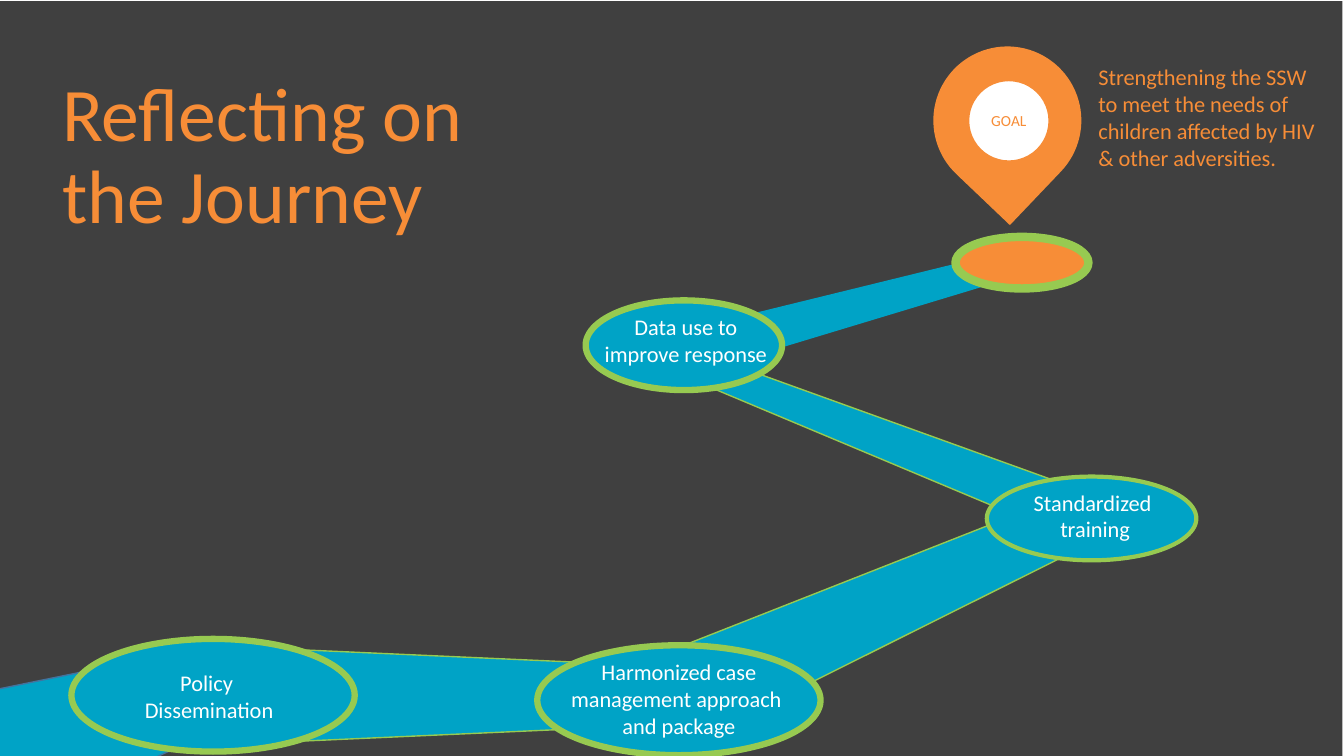
"""Build the "Reflecting on the Journey" road map slide."""
from dataclasses import dataclass

from pptx import Presentation
from pptx.dml.color import RGBColor
from pptx.enum.shapes import MSO_SHAPE
from pptx.enum.text import MSO_ANCHOR, PP_ALIGN
from pptx.util import Cm, Pt

RECT = MSO_SHAPE.RECTANGLE
ROAD = MSO_SHAPE.FLOWCHART_MANUAL_OPERATION
OVAL = MSO_SHAPE.OVAL
TEAR = MSO_SHAPE.TEAR
LEFT, CENTER = PP_ALIGN.LEFT, PP_ALIGN.CENTER
TOP, MIDDLE = MSO_ANCHOR.TOP, MSO_ANCHOR.MIDDLE

FONT = "Calibri"
GRAY, WHITE = "404040", "FFFFFF"
BLUE, GREEN, ORANGE, NAVY = "00A3C6", "97CA51", "F78D37", "43739E"


@dataclass
class Form:
    kind: int
    box: tuple[float, float, float, float]
    fill: str = BLUE
    line: str = ""
    width: float = 1
    turn: float = 0


@dataclass
class Label:
    box: tuple[float, float, float, float]
    lines: tuple[str, ...]
    size: int = 16
    color: str = WHITE
    align: int = CENTER
    anchor: int = TOP
    space: float = 1


FORMS = [
    Form(RECT, (0, 0.03, 33.83, 19.05), GRAY),
    Form(ROAD, (0.51, 15.32, 3.51, 5.99), line=NAVY, turn=251.8),
    Form(ROAD, (21.44, 6.32, 1.19, 9.32), line=GREEN, turn=111.3),
    Form(ROAD, (20.96, 10.06, 2.31, 10.54), line=GREEN, turn=246),
    Form(ROAD, (19.96, 3.53, 1.19, 8.94), turn=254.7),
    Form(ROAD, (10.08, 12.04, 2.46, 10.97), line=GREEN, turn=270),
    Form(OVAL, (24.87, 12.01, 5.28, 2.11), line=GREEN, width=3),
    Form(OVAL, (24.08, 5.97, 3.35, 1.3), ORANGE, GREEN, 6),
    Form(OVAL, (14.76, 7.57, 4.95, 2.26), line=GREEN, width=4.5),
    Form(OVAL, (13.54, 16.26, 7.14, 2.77), line=GREEN, width=4.5),
    Form(OVAL, (1.8, 16.1, 7.14, 2.84), line=GREEN, width=4.5),
    Form(TEAR, (23.52, 1.17, 3.73, 3.73), ORANGE, turn=133.6),
]
GOAL = Form(OVAL, (24.41, 2.03, 2.03, 2.03), WHITE, ORANGE)
MARK = Label(GOAL.box, ("GOAL",), 11, ORANGE, anchor=MIDDLE)

LABELS = [
    Label((13.39, 16.46, 7.44, 2.31),
          ("Harmonized case management approach ", "and package")),
    Label((23.88, 12.19, 7.44, 1.63), ("Standardized ", "training")),
    Label((14.81, 7.77, 4.95, 1.63), ("Data use to improve response",)),
    Label((1.98, 16.74, 6.58, 1.63), ("Policy ", "Dissemination")),
    Label((1.32, 1.75, 13.49, 4.45), ("Reflecting on the Journey",),
          54, ORANGE, LEFT, MIDDLE, 0.9),
    Label((27.43, 1.47, 6.1, 3),
          ("Strengthening the SSW to meet the needs of ",
           "children affected by HIV & other adversities."),
          16, ORANGE, LEFT),
]


def paint(target, color: str) -> None:
    target.solid()
    target.fore_color.rgb = RGBColor.from_string(color)


def draw(slide, form: Form):
    shape = slide.shapes.add_shape(form.kind, *map(Cm, form.box))
    shape.shadow.inherit = False
    shape.rotation = form.turn
    paint(shape.fill, form.fill)
    if form.line:
        paint(shape.line.fill, form.line)
        shape.line.width = Pt(form.width)
    else:
        shape.line.fill.background()
    return shape


def write(frame, label: Label, wrap: bool = True) -> None:
    frame.word_wrap = wrap
    frame.vertical_anchor = label.anchor
    para = frame.paragraphs[0]
    para.alignment = label.align
    para.line_spacing = label.space
    for i, line in enumerate(label.lines):
        if i:
            para.add_line_break()
        run = para.add_run()
        run.text = line
        run.font.name = FONT
        run.font.size = Pt(label.size)
        paint(run.font.fill, label.color)


def main() -> None:
    deck = Presentation()
    deck.slide_width, deck.slide_height = Cm(33.87), Cm(19.05)
    slide = deck.slides.add_slide(deck.slide_layouts[6])
    for form in FORMS:
        draw(slide, form)
    write(draw(slide, GOAL).text_frame, MARK, wrap=False)
    for label in LABELS:
        box = slide.shapes.add_textbox(*map(Cm, label.box))
        write(box.text_frame, label)
    deck.save("out.pptx")


if __name__ == "__main__":
    main()
